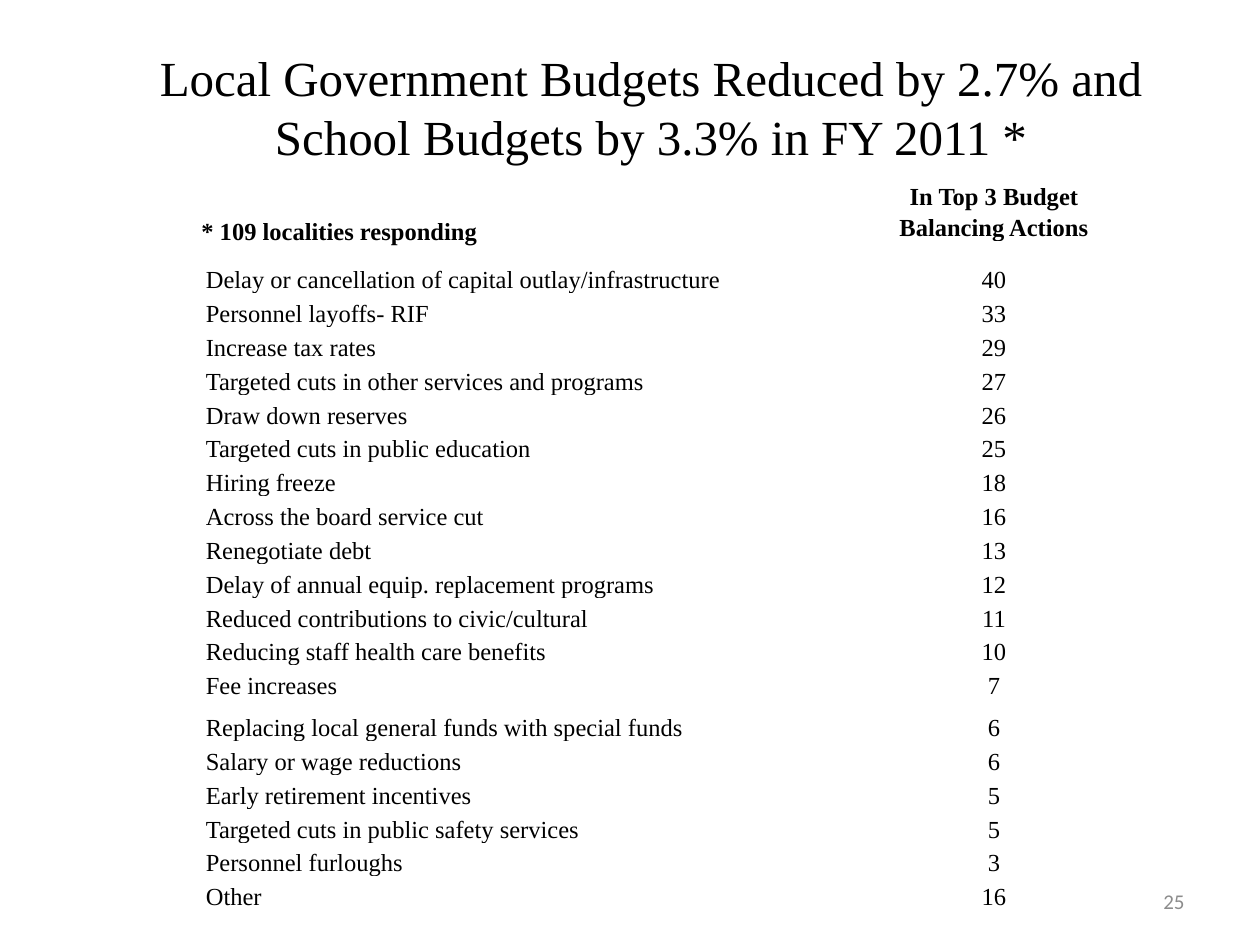
from dataclasses import dataclass

import pptx
import pptx.dml.color
import pptx.enum.text
import pptx.util

Pt = pptx.util.Pt
RGB = pptx.dml.color.RGBColor
ALIGN = pptx.enum.text.PP_ALIGN
ANCHOR = pptx.enum.text.MSO_ANCHOR
FIT = pptx.enum.text.MSO_AUTO_SIZE


@dataclass(frozen=True)
class Theme:
    serif: str = "Times New Roman"
    sans: str = "Calibri"
    ink: RGB = RGB(0x00, 0x00, 0x00)
    gray: RGB = RGB(0x8C, 0x8C, 0x8C)
    title: float = 28
    body: float = 14
    small: float = 12


THEME = Theme()

ACTIONS = [
    ("Delay or cancellation of capital outlay/infrastructure", 40),
    ("Personnel layoffs- RIF", 33),
    ("Increase tax rates", 29),
    ("Targeted cuts in other services and programs", 27),
    ("Draw down reserves", 26),
    ("Targeted cuts in public education", 25),
    ("Hiring freeze", 18),
    ("Across the board service cut", 16),
    ("Renegotiate debt", 13),
    ("Delay of annual equip. replacement programs", 12),
    ("Reduced contributions to civic/cultural", 11),
    ("Reducing staff health care benefits", 10),
    ("Fee increases", 7),
    ("Replacing local general funds with special funds", 6),
    ("Salary or wage reductions", 6),
    ("Early retirement incentives", 5),
    ("Targeted cuts in public safety services", 5),
    ("Personnel furloughs", 3),
    ("Other", 16),
]
HEAD_HIGH = 42
ROW_HIGH = 19.35
TALL_ROWS = {1: 30, 14: 24}


def write(frame, text, size, align=ALIGN.LEFT, bold=False,
          font=THEME.serif, color=THEME.ink):
    frame.text = text
    para = frame.paragraphs[0]
    para.alignment = align
    for run in para.runs:
        run.font.name = font
        run.font.size = Pt(size)
        run.font.bold = bold
        run.font.color.rgb = color
    return para


def add_title(slide, text):
    title = slide.shapes.title
    title.left, title.top = Pt(48), Pt(24)
    title.width, title.height = Pt(648), Pt(74)
    frame = title.text_frame
    frame.auto_size = FIT.NONE
    frame.vertical_anchor = ANCHOR.MIDDLE
    write(frame, text, THEME.title, ALIGN.CENTER)


def add_label(slide, box, text, size, wrap=True, anchor=ANCHOR.TOP, **style):
    label = slide.shapes.add_textbox(*map(Pt, box))
    frame = label.text_frame
    frame.word_wrap = wrap
    frame.vertical_anchor = anchor
    write(frame, text, size, **style)
    return frame


def fill_cell(cell, text, align, bold):
    cell.vertical_anchor = ANCHOR.BOTTOM
    cell.margin_left = cell.margin_right = Pt(3.6)
    cell.margin_top = cell.margin_bottom = Pt(0)
    para = write(cell.text_frame, text, THEME.body, align, bold)
    para.line_spacing = 1.15


def add_table(slide, heading, actions):
    highs = [HEAD_HIGH] + [TALL_ROWS.get(i, ROW_HIGH)
                           for i in range(1, len(actions) + 1)]
    frame = slide.shapes.add_table(len(highs), 2, Pt(114), Pt(96),
                                   Pt(534), Pt(sum(highs)))
    table = frame.table
    table.first_row = table.horz_banding = False
    for col, width in zip(table.columns, (374, 160)):
        col.width = Pt(width)
    for row, high in zip(table.rows, highs):
        row.height = Pt(high)
    for cell in table.iter_cells():
        cell.fill.background()
    fill_cell(table.cell(0, 1), heading, ALIGN.CENTER, True)
    for i, (action, count) in enumerate(actions, 1):
        fill_cell(table.cell(i, 0), action, ALIGN.LEFT, False)
        fill_cell(table.cell(i, 1), str(count), ALIGN.CENTER, False)


def main():
    deck = pptx.Presentation()
    deck.slide_width, deck.slide_height = Pt(720), Pt(540)
    slide = deck.slides.add_slide(deck.slide_layouts[5])
    add_label(slide, (516, 500.5, 168, 28.75), "25", THEME.small,
              anchor=ANCHOR.MIDDLE, align=ALIGN.RIGHT,
              font=THEME.sans, color=THEME.gray)
    add_title(slide, "Local Government Budgets Reduced by 2.7% and "
                     "School Budgets by 3.3% in FY 2011 *")
    add_table(slide, "In Top 3 Budget Balancing Actions", ACTIONS)
    note = add_label(slide, (108, 120, 177, 24.25),
                     "* 109 localities responding", THEME.body,
                     wrap=False, bold=True)
    note.auto_size = FIT.SHAPE_TO_FIT_TEXT
    deck.save("out.pptx")


if __name__ == "__main__":
    main()
